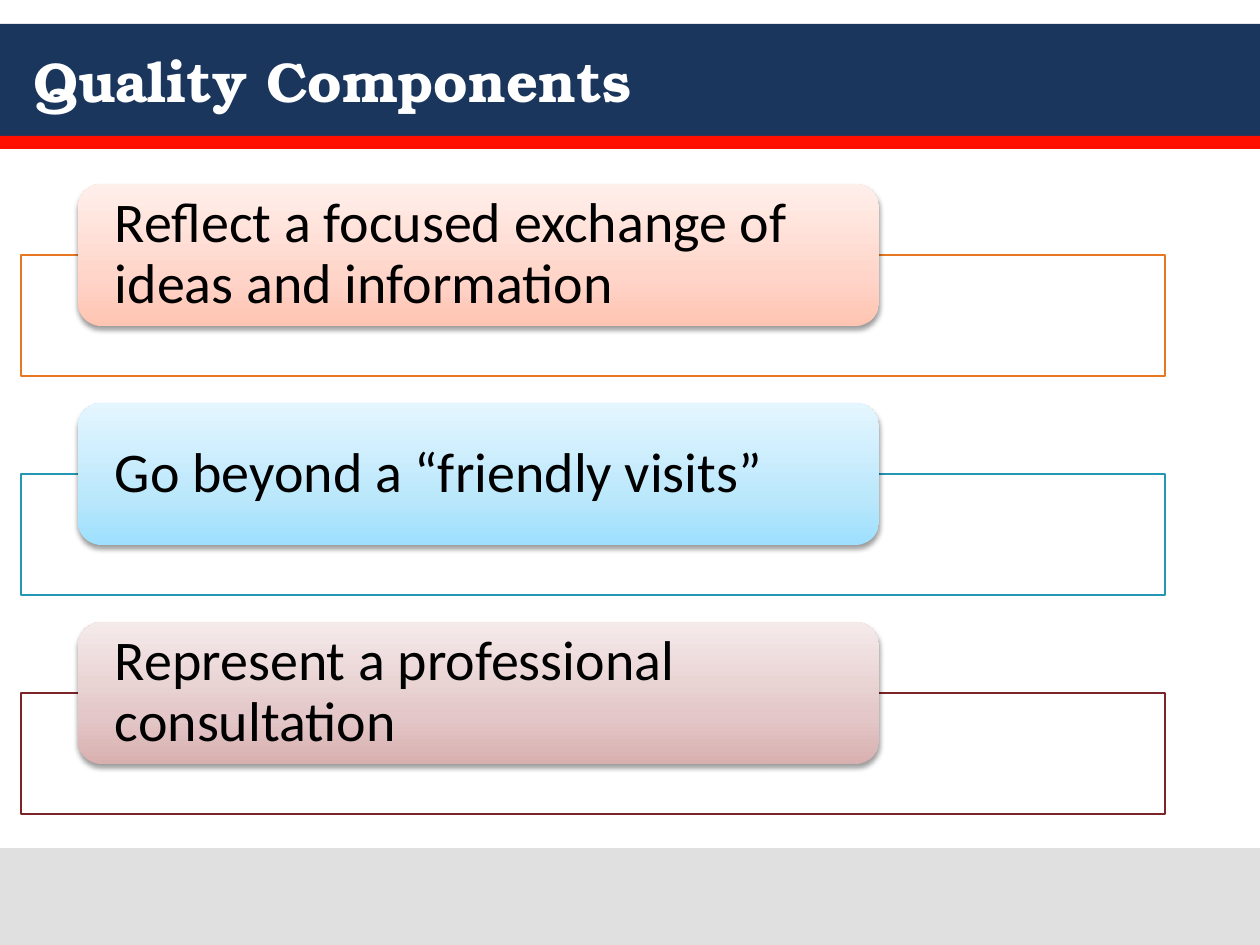
from dataclasses import dataclass

from pptx import Presentation
from pptx.dml.color import RGBColor
from pptx.enum.shapes import MSO_SHAPE
from pptx.enum.text import MSO_ANCHOR, PP_ALIGN
from pptx.oxml import parse_xml
from pptx.oxml.ns import nsdecls, qn
from pptx.shapes.autoshape import Shape
from pptx.slide import Slide
from pptx.text.text import TextFrame
from pptx.util import Emu, Pt

EMU_PER_PX = 914400 / 126
PAGE_WIDTH, PAGE_HEIGHT = 1260, 945
FIRST_TOP, ROW_STEP = 184, 219
COLOURS = {
    "white": "FFFFFF",
    "black": "000000",
    "navy": "1B365D",
    "red": "FF0F00",
    "grey": "E0E0E0",
    "orange": "E87722",
    "teal": "2397B3",
    "maroon": "7C2529",
}


@dataclass(frozen=True)
class Band:
    """A full-width stripe of the page."""
    top: int
    height: int
    colour: str


@dataclass(frozen=True)
class Component:
    """A quality component with its frame colour and card gradient."""
    text: str
    outline: str
    gradient: tuple[str, str, str]


BANDS = (Band(24, 112, "navy"), Band(136, 13, "red"), Band(848, 97, "grey"))
COMPONENTS = (
    Component("Reflect a focused exchange of ideas and information", "orange",
              ("FFC4B2", "FFD5C9", "FFEFEB")),
    Component("Go beyond a “friendly visits”", "teal",
              ("9EE0FD", "BCE8FC", "E4F6FF")),
    Component("Represent a professional consultation", "maroon",
              ("D9B0B0", "E4C8C9", "F5EAEA")),
)


def px(length: int) -> Emu:
    """Turn pixels into EMU."""
    return Emu(round(length * EMU_PER_PX))


def colour(name: str) -> RGBColor:
    """Look up a named colour."""
    return RGBColor.from_string(COLOURS[name])


def add_rectangle(page: Slide, left: int, top: int, width: int, height: int, fill: str) -> Shape:
    """Draw a flat rectangle without an outline."""
    shape = page.shapes.add_shape(
        MSO_SHAPE.RECTANGLE, px(left), px(top), px(width), px(height))
    shape.shadow.inherit = False
    shape.fill.solid()
    shape.fill.fore_color.rgb = colour(fill)
    shape.line.fill.background()
    return shape


def write_text(frame: TextFrame, text: str, font_name: str, ink: str, bold: bool = False) -> None:
    """Write one left-aligned, vertically centred paragraph."""
    frame.word_wrap = True
    frame.vertical_anchor = MSO_ANCHOR.MIDDLE
    para = frame.paragraphs[0]
    para.text = text
    para.alignment = PP_ALIGN.LEFT
    para.font.name = font_name
    para.font.size = Pt(32)
    para.font.bold = bold
    para.font.color.rgb = colour(ink)


def add_title(page: Slide, text: str) -> None:
    """Place the title over the navy band."""
    box = page.shapes.add_textbox(px(21), px(24), px(1218), px(113))
    write_text(box.text_frame, text, "TeX Gyre Bonum", "white", bold=True)


def add_frame(page: Slide, top: int, outline: str) -> None:
    """Draw the thin frame behind a card."""
    frame = add_rectangle(page, 21, top, 1144, 121, "white")
    white = frame.element.spPr.find(f".//{qn('a:srgbClr')}")
    white.append(parse_xml(f'<a:alpha {nsdecls("a")} val="90000"/>'))
    frame.line.color.rgb = colour(outline)
    frame.line.width = Pt(0.75)


def add_card(page: Slide, top: int, component: Component) -> None:
    """Draw a rounded gradient card with a soft shadow and its text."""
    card = page.shapes.add_shape(
        MSO_SHAPE.ROUNDED_RECTANGLE, px(78), px(top), px(801), px(142))
    stops = "".join(
        f'<a:gs pos="{share * 1000}"><a:srgbClr val="{shade}"/></a:gs>'
        for share, shade in zip((0, 35, 100), component.gradient))
    properties = card.element.spPr
    properties.append(parse_xml(
        f'<a:gradFill {nsdecls("a")} rotWithShape="1"><a:gsLst>{stops}</a:gsLst>'
        '<a:lin ang="16200000" scaled="1"/></a:gradFill>'))
    card.line.fill.background()
    properties.append(parse_xml(
        f'<a:effectLst {nsdecls("a")}><a:outerShdw blurRad="{Pt(3.1)}" dist="{Pt(1.6)}" '
        f'dir="5400000" rotWithShape="0"><a:srgbClr val="{COLOURS["black"]}">'
        '<a:alpha val="38000"/></a:srgbClr></a:outerShdw></a:effectLst>'))
    frame = card.text_frame
    frame.margin_left = frame.margin_right = px(30)
    frame.margin_top = frame.margin_bottom = 0
    write_text(frame, component.text, "Calibri", "black")
    frame.paragraphs[0].line_spacing = 0.9


def main() -> None:
    """Build and save the deck."""
    deck = Presentation()
    deck.slide_width, deck.slide_height = px(PAGE_WIDTH), px(PAGE_HEIGHT)
    page = deck.slides.add_slide(deck.slide_layouts[6])
    for band in BANDS:
        add_rectangle(page, 0, band.top, PAGE_WIDTH, band.height, band.colour)
    add_title(page, "Quality Components")
    for index, component in enumerate(COMPONENTS):
        top = FIRST_TOP + index * ROW_STEP
        add_frame(page, top + 71, component.outline)
        add_card(page, top, component)
    deck.save("out.pptx")


if __name__ == "__main__":
    main()
